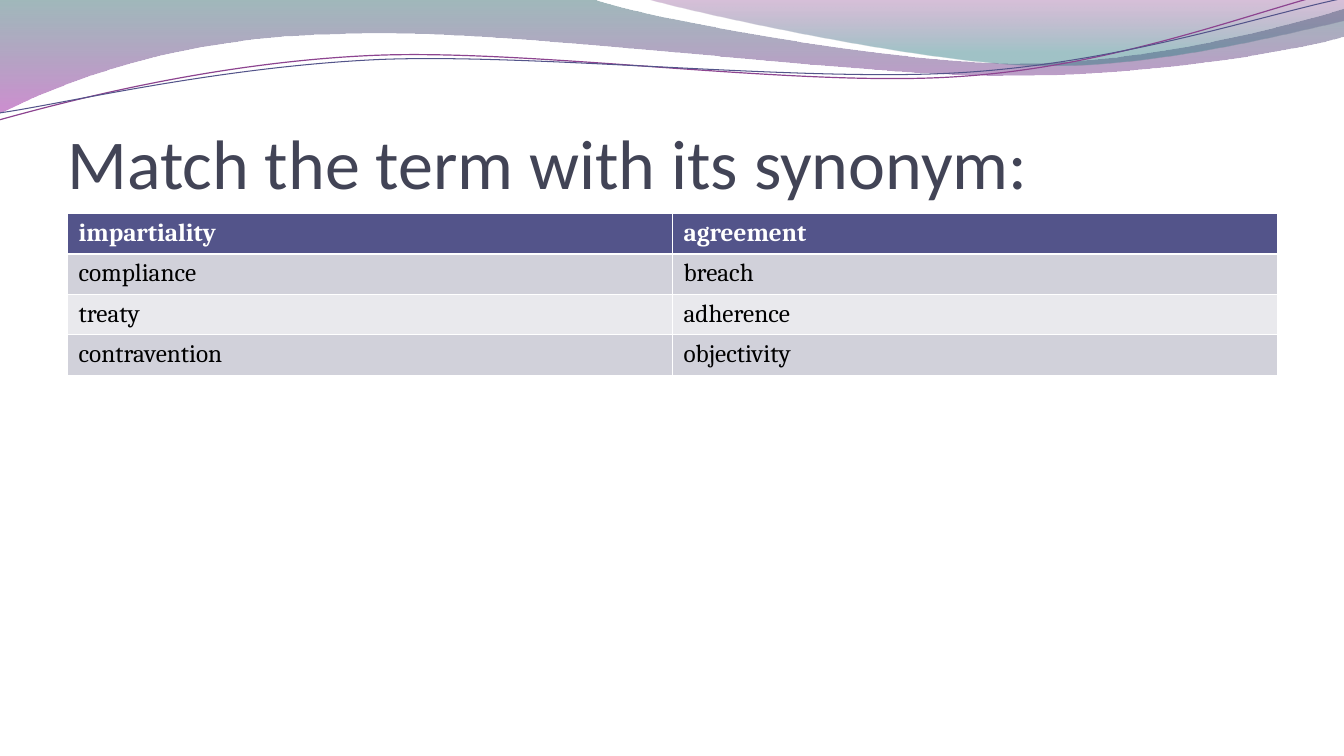
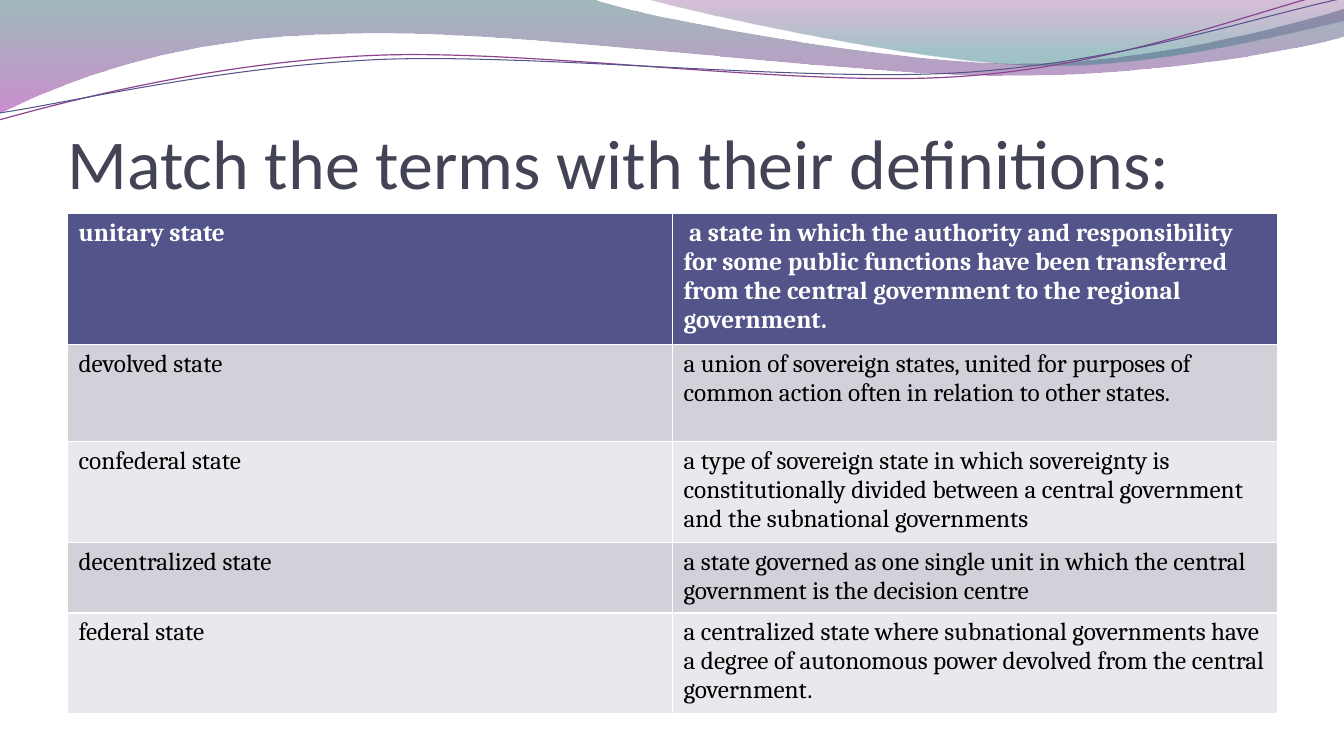
from dataclasses import dataclass

from lxml.etree import SubElement
from pptx import Presentation
from pptx.dml.color import RGBColor
from pptx.enum.text import MSO_ANCHOR
from pptx.oxml.ns import qn
from pptx.util import Inches, Pt

TITLE_FONT, BODY_FONT = "Calibri", "Cambria"
TITLE_COLOR, HEADER, WHITE, BLACK = "424456", "53548A", "FFFFFF", "000000"
BANDS = ("D1D1DA", "E9E9ED")
LEFT, WIDTH, TABLE_TOP = 0.67, 12, 2.12
LINE_HEIGHT, ROW_PADDING, MIN_ROW = 0.29, 0.09, 0.4


@dataclass(frozen=True)
class Stop:
    position: float
    color: str
    opacity: int


@dataclass(frozen=True)
class Band:
    start: tuple
    segments: tuple
    stops: tuple


@dataclass(frozen=True)
class Strand:
    start: tuple
    segments: tuple
    color: str
    width: float


@dataclass(frozen=True)
class Row:
    term: str
    match: str
    lines: int = 1


@dataclass(frozen=True)
class Exercise:
    title: str
    rows: tuple


WAVES = (
    Band(
        (0, 0),
        ((5.87, -0.01),
         (6.34, 0.17, 8.85, 0.63, 10.11, 0.63),
         (11.38, 0.63, 12.78, 0.26, 13.33, 0.09),
         (13.35, 0.36),
         (13.11, 0.44, 11.6, 0.76, 9.94, 0.75),
         (8.29, 0.75, 5.09, 0.28, 3.43, 0.34),
         (1.72, 0.36, 0.61, 0.83, -0.01, 1.13),
         (0, 0)),
        (Stop(0, "2D6368", 45), Stop(1, "A530A9", 55)),
    ),
    Band(
        (6.39, -0.01),
        ((6.79, 0.11, 9.09, 0.62, 10.25, 0.65),
         (11.41, 0.69, 12.82, 0.32, 13.33, 0.21),
         (13.33, 0),
         (6.39, -0.01)),
        (Stop(0, "7F2F82", 30), Stop(0.8, "2F7B82", 45)),
    ),
    Strand(
        (-0.01, 1.19),
        ((0.64, 1.01, 2.11, 0.62, 3.69, 0.55),
         (5.27, 0.48, 7.9, 0.87, 9.5, 0.76),
         (11.1, 0.66, 12.52, 0.08, 13.31, -0.1)),
        "8D4490", 0.85,
    ),
    Strand(
        (0, 1.12),
        ((0.63, 1.03, 2.18, 0.66, 3.78, 0.59),
         (5.37, 0.53, 7.96, 0.82, 9.55, 0.72),
         (11.15, 0.62, 12.55, 0.14, 13.34, -0.02)),
        HEADER, 0.75,
    ),
)

EXERCISES = (
    Exercise("Match the term with its synonym:", (
        Row("impartiality", "agreement"),
        Row("compliance", "breach"),
        Row("treaty", "adherence"),
        Row("contravention", "objectivity"),
    )),
    Exercise("Match the terms with their definitions:", (
        Row("unitary state",
            " a state in which the authority and responsibility for some public "
            "functions have been transferred from the central government to the "
            "regional government.", 4),
        Row("devolved state",
            "a union of sovereign states, united for purposes of common action "
            "often in relation to other states.", 3),
        Row("confederal state",
            "a type of sovereign state in which sovereignty is constitutionally "
            "divided between a central government and the subnational "
            "governments", 3),
        Row("decentralized state",
            "a state governed as one single unit in which the central "
            "government is the decision centre", 2),
        Row("federal state",
            "a centralized state where subnational governments have a degree of "
            "autonomous power devolved from the central government.", 3),
    )),
)


def rgb(color: str) -> RGBColor:
    return RGBColor.from_string(color)


def style_text(p, font: str, size: float, color: str, bold: bool = False) -> None:
    for r in p.runs:
        r.font.name = font
        r.font.size = Pt(size)
        r.font.bold = bold
        r.font.color.rgb = rgb(color)


def bend(sp, segments: tuple) -> None:
    for node, segment in zip(sp.element.xpath(".//a:lnTo"), segments):
        if len(segment) == 2:
            continue
        node.tag = qn("a:cubicBezTo")
        for i, (x, y) in enumerate((segment[:2], segment[2:4])):
            node.insert(i, node.makeelement(qn("a:pt"), {
                "x": str(Inches(x) - sp.left), "y": str(Inches(y) - sp.top)}))


def add_wave(slide, wave: Band | Strand) -> None:
    points = [(Inches(s[-2]), Inches(s[-1])) for s in (wave.start, *wave.segments)]
    closed = isinstance(wave, Band)
    builder = slide.shapes.build_freeform(*points[0], scale=1.0)
    builder.add_line_segments(points[1:], close=closed)
    sp = builder.convert_to_shape()
    bend(sp, wave.segments)
    sp.shadow.inherit = False
    if not closed:
        sp.fill.background()
        sp.line.color.rgb = rgb(wave.color)
        sp.line.width = Pt(wave.width)
        return
    sp.line.fill.background()
    sp.fill.gradient()
    sp.fill.gradient_angle = 270
    for target, stop in zip(sp.fill.gradient_stops, wave.stops):
        target.position = stop.position
        target.color.rgb = rgb(stop.color)
    for node, stop in zip(sp.element.xpath(".//a:gs/a:srgbClr"), wave.stops):
        SubElement(node, qn("a:alpha"), val=str(stop.opacity * 1000))


def add_title(slide, text: str) -> None:
    sp = slide.shapes.add_textbox(Inches(LEFT), Inches(0.77), Inches(WIDTH), Inches(1.25))
    tf = sp.text_frame
    tf.word_wrap = True
    tf.vertical_anchor = MSO_ANCHOR.BOTTOM
    tf.margin_left = tf.margin_right = tf.margin_bottom = 0
    tf.text = text
    style_text(tf.paragraphs[0], TITLE_FONT, 50, TITLE_COLOR)


def row_height(row: Row) -> float:
    return max(MIN_ROW, row.lines * LINE_HEIGHT + ROW_PADDING)


def add_matching_table(slide, rows: tuple) -> None:
    height = sum(row_height(row) for row in rows)
    table = slide.shapes.add_table(
        len(rows), 2, Inches(LEFT), Inches(TABLE_TOP), Inches(WIDTH), Inches(height)).table
    for i, row in enumerate(rows):
        table.rows[i].height = Inches(row_height(row))
        header = i == 0
        for cell, text in zip(table.rows[i].cells, (row.term, row.match)):
            cell.margin_left = cell.margin_right = Inches(0.11)
            cell.fill.solid()
            cell.fill.fore_color.rgb = rgb(HEADER if header else BANDS[(i - 1) % 2])
            cell.text_frame.text = text
            style_text(cell.text_frame.paragraphs[0], BODY_FONT, 18,
                       WHITE if header else BLACK, header)


def main() -> None:
    prs = Presentation()
    prs.slide_width, prs.slide_height = Inches(13.33), Inches(7.5)
    for exercise in EXERCISES:
        slide = prs.slides.add_slide(prs.slide_layouts[6])
        for wave in WAVES:
            add_wave(slide, wave)
        add_title(slide, exercise.title)
        add_matching_table(slide, exercise.rows)
    prs.save("out.pptx")


if __name__ == "__main__":
    main()
